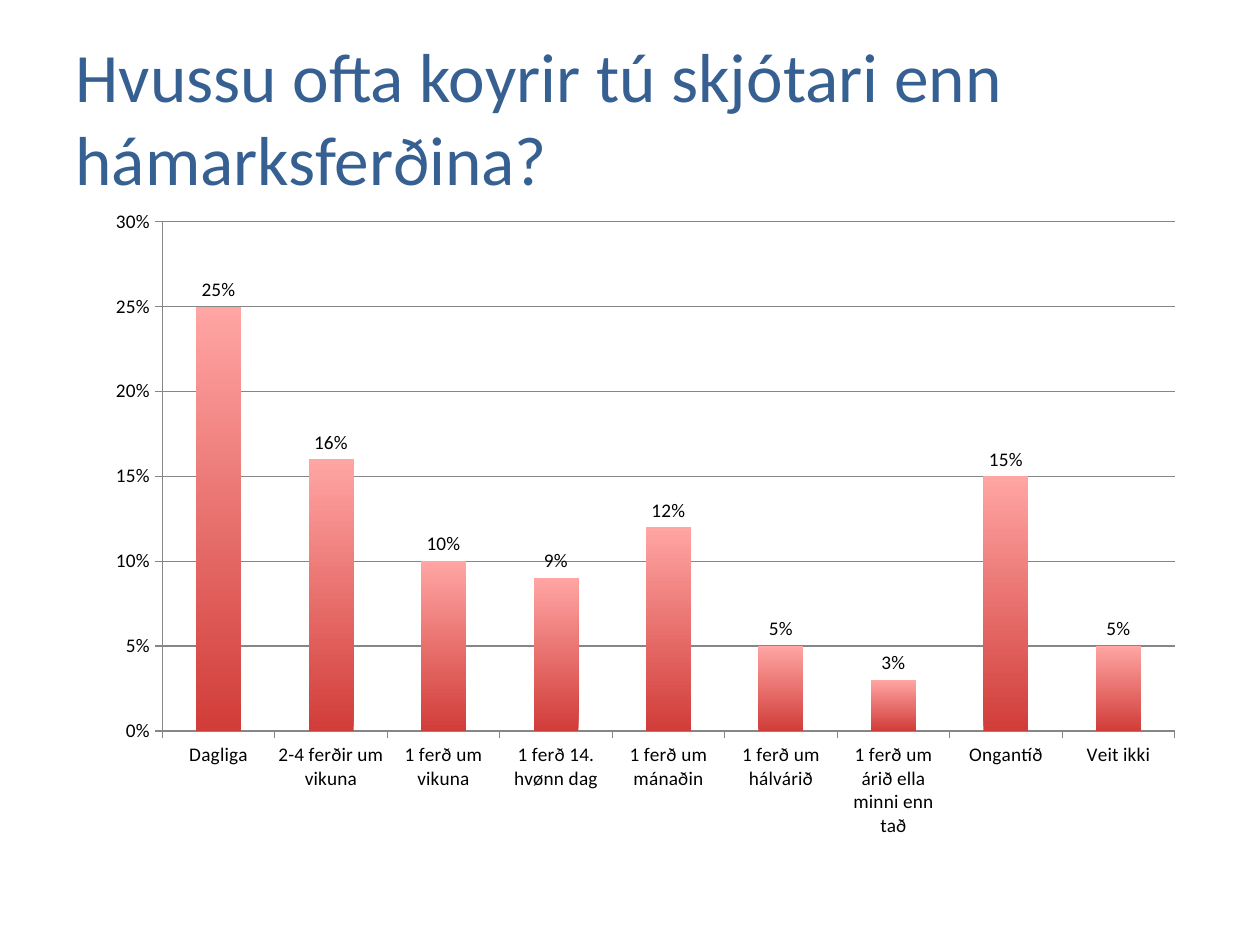
from typing import NamedTuple

from lxml import etree
from pptx import Presentation
from pptx.chart.chart import Chart
from pptx.chart.data import CategoryChartData
from pptx.dml.color import RGBColor
from pptx.enum.chart import XL_CHART_TYPE, XL_LABEL_POSITION, XL_TICK_MARK
from pptx.enum.text import MSO_ANCHOR, MSO_AUTO_SIZE, PP_ALIGN
from pptx.oxml.ns import qn
from pptx.util import Inches, Pt

COLUMNS = XL_CHART_TYPE.COLUMN_CLUSTERED
OUTSIDE_END = XL_LABEL_POSITION.OUTSIDE_END
TICK_OUTSIDE = XL_TICK_MARK.OUTSIDE
TICK_NONE = XL_TICK_MARK.NONE
MIDDLE = MSO_ANCHOR.MIDDLE
LEFT = PP_ALIGN.LEFT
NO_AUTOFIT = MSO_AUTO_SIZE.NONE

FONT = "Calibri"
TITLE_BLUE = "376092"
BLACK = "000000"
LINE_GRAY = "868686"
BAR_BOTTOM = "D13D39"
BAR_TOP = "FFA5A3"
TITLE_ONLY_LAYOUT = 5


class Answer(NamedTuple):
    label: str
    share: float


class PlotFrame(NamedTuple):
    """Inner plot area as fractions of the chart."""
    x: float
    y: float
    w: float
    h: float


ANSWERS = [
    Answer("Dagliga", 0.25),
    Answer("2-4 ferðir um vikuna", 0.16),
    Answer("1 ferð um vikuna", 0.10),
    Answer("1 ferð 14. hvønn dag", 0.09),
    Answer("1 ferð um mánaðin", 0.12),
    Answer("1 ferð um hálvárið", 0.05),
    Answer("1 ferð um árið ella minni enn tað", 0.03),
    Answer("Ongantíð", 0.15),
    Answer("Veit ikki", 0.05),
]


def color(value: str) -> RGBColor:
    return RGBColor.from_string(value)


def set_title(title, text: str) -> None:
    title.left, title.top = Inches(0.5), Inches(0.3)
    title.width, title.height = Inches(9), Inches(1.25)
    frame = title.text_frame
    frame.text = text
    frame.word_wrap = True
    frame.auto_size = NO_AUTOFIT
    frame.vertical_anchor = MIDDLE
    paragraph = frame.paragraphs[0]
    paragraph.alignment = LEFT
    paragraph.font.name = FONT
    paragraph.font.size = Pt(39.6)
    paragraph.font.color.rgb = color(TITLE_BLUE)


def place_plot(chart: Chart, plot_frame: PlotFrame) -> None:
    plot_area = chart._chartSpace.chart.plotArea
    for old_layout in plot_area.findall(qn("c:layout")):
        plot_area.remove(old_layout)
    layout = etree.Element(qn("c:layout"))
    manual = etree.SubElement(layout, qn("c:manualLayout"))
    settings = {"layoutTarget": "inner", "xMode": "edge", "yMode": "edge"}
    for name, value in (settings | plot_frame._asdict()).items():
        etree.SubElement(manual, qn(f"c:{name}")).set("val", str(value))
    plot_area.insert(0, layout)


def style_axes(chart: Chart) -> None:
    for axis in (chart.category_axis, chart.value_axis):
        axis.major_tick_mark = TICK_OUTSIDE
        axis.minor_tick_mark = TICK_NONE
        axis.format.line.color.rgb = color(LINE_GRAY)
        axis.format.line.width = Pt(0.75)
    axis = chart.value_axis
    axis.minimum_scale, axis.maximum_scale, axis.major_unit = 0, 0.3, 0.05
    axis.tick_labels.number_format = "0%"
    axis.tick_labels.number_format_is_linked = False
    axis.has_major_gridlines = True
    axis.major_gridlines.format.line.color.rgb = color(LINE_GRAY)
    axis.major_gridlines.format.line.width = Pt(0.75)


def style_columns(chart: Chart) -> None:
    plot = chart.plots[0]
    plot.gap_width = 150
    plot.vary_by_categories = False
    plot.has_data_labels = True
    labels = plot.data_labels
    labels.show_value = True
    labels.number_format = "0%"
    labels.number_format_is_linked = False
    labels.position = OUTSIDE_END
    fill = plot.series[0].format.fill
    fill.gradient()
    fill.gradient_angle = 90
    for stop, value in zip(fill.gradient_stops, (BAR_BOTTOM, BAR_TOP)):
        stop.color.rgb = color(value)


def add_answer_chart(slide, answers: list[Answer]) -> None:
    data = CategoryChartData(number_format="0%")
    data.categories = [answer.label for answer in answers]
    data.add_series("Series 1", [answer.share for answer in answers])
    chart = slide.shapes.add_chart(
        COLUMNS, Inches(0.67), Inches(1.55), Inches(8.83), Inches(5.25), data
    ).chart
    chart.has_legend = False
    chart.has_title = False
    chart.font.name = FONT
    chart.font.size = Pt(11)
    chart.font.color.rgb = color(BLACK)
    place_plot(chart, PlotFrame(x=0.07, y=0.04, w=0.91, h=0.77))
    style_axes(chart)
    style_columns(chart)


def main() -> None:
    deck = Presentation()
    deck.slide_width, deck.slide_height = Inches(10), Inches(7.5)
    slide = deck.slides.add_slide(deck.slide_layouts[TITLE_ONLY_LAYOUT])
    set_title(slide.shapes.title, "Hvussu ofta koyrir tú skjótari enn hámarksferðina?")
    add_answer_chart(slide, ANSWERS)
    deck.save("out.pptx")


if __name__ == "__main__":
    main()
